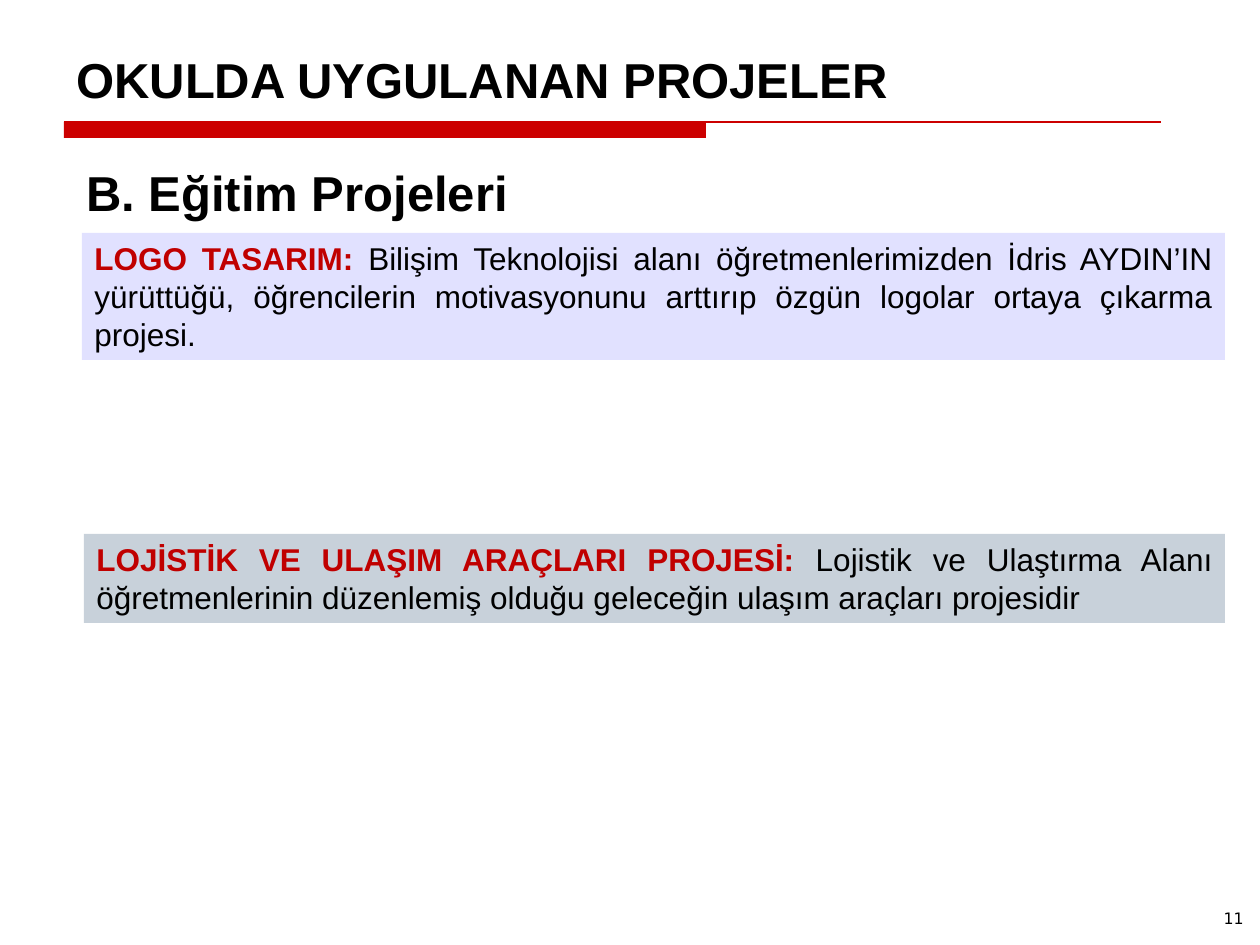
import pptx
import pptx.util
import pptx.dml.color
import pptx.enum.shapes
import pptx.enum.text
import pptx.oxml.ns
import lxml.etree

ALIGN = pptx.enum.text.PP_ALIGN
ANCHOR = pptx.enum.text.MSO_ANCHOR
COLORS = {
    "black": "000000",
    "rule": "CC0000",
    "lead": "C00000",
    "lilac": "E1E1FF",
    "slate": "C8D1DA",
}


def px(count):
    return pptx.util.Emu(round(count * 914400 / 126))


def place(box):
    return [px(side) for side in box]


def rgb(name):
    return pptx.dml.color.RGBColor.from_string(COLORS[name])


def style(run, size, color="black", bold=False, face="Arial"):
    font = run.font
    font.name = face
    font.size = pptx.util.Pt(size)
    font.bold = bold
    font.color.rgb = rgb(color)


def block(slide, box, color):
    """Add a plain filled rectangle."""
    shape = slide.shapes.add_shape(
        pptx.enum.shapes.MSO_SHAPE.RECTANGLE, *place(box))
    shape.shadow.inherit = False
    shape.fill.solid()
    shape.fill.fore_color.rgb = rgb(color)
    shape.line.fill.background()
    return shape


def rule(slide, box):
    """Add a thin line across the box, with a thick bar under its left part."""
    left, top, width, height = box
    block(slide, (left, top, 642, height), "rule")
    line = slide.shapes.add_connector(
        pptx.enum.shapes.MSO_CONNECTOR.STRAIGHT,
        *place((left, top, left + width, top)))
    line.line.color.rgb = rgb("rule")
    line.line.width = pptx.util.Pt(0.75)
    lxml.etree.SubElement(line._element.spPr, pptx.oxml.ns.qn("a:effectLst"))


def label(slide, box, text):
    frame = slide.shapes.add_textbox(*place(box)).text_frame
    frame.word_wrap = True
    frame.vertical_anchor = ANCHOR.MIDDLE
    frame.text = text
    return frame


def heading(slide, box, text):
    frame = label(slide, box, text)
    style(frame.paragraphs[0].runs[0], 28, bold=True)


def number(slide, box, text):
    frame = label(slide, box, text)
    frame.vertical_anchor = ANCHOR.BOTTOM
    frame.margin_bottom = px(21)
    para = frame.paragraphs[0]
    para.alignment = ALIGN.RIGHT
    style(para.runs[0], 9, face="DejaVu Sans")


def project(slide, box, color, name, about):
    """Add a project panel: a bold red name, then its description."""
    frame = block(slide, box, color).text_frame
    frame.word_wrap = True
    frame.vertical_anchor = ANCHOR.TOP
    para = frame.paragraphs[0]
    para.alignment = ALIGN.JUSTIFY
    para.text = name + " "
    style(para.runs[0], 18, "lead", bold=True)
    run = para.add_run()
    run.text = about
    style(run, 18)


def main():
    deck = pptx.Presentation()
    deck.slide_width, deck.slide_height = px(1260), px(945)
    slide = deck.slides.add_slide(deck.slide_layouts[6])
    rule(slide, (64, 122, 1097, 16))
    number(slide, (983, 883, 273, 66), "11")
    heading(slide, (64, 42, 1102, 73), "OKULDA UYGULANAN PROJELER")
    project(slide, (82, 233, 1143, 127), "lilac", "LOGO TASARIM:",
            "Bilişim Teknolojisi alanı öğretmenlerimizden İdris AYDIN’IN "
            "yürüttüğü, öğrencilerin motivasyonunu arttırıp özgün logolar "
            "ortaya çıkarma projesi.")
    heading(slide, (74, 155, 1150, 73), "B. Eğitim Projeleri")
    project(slide, (84, 534, 1141, 89), "slate",
            "LOJİSTİK VE ULAŞIM ARAÇLARI PROJESİ:",
            "Lojistik ve Ulaştırma Alanı öğretmenlerinin düzenlemiş olduğu "
            "geleceğin ulaşım araçları projesidir")
    deck.save("out.pptx")


if __name__ == "__main__":
    main()
